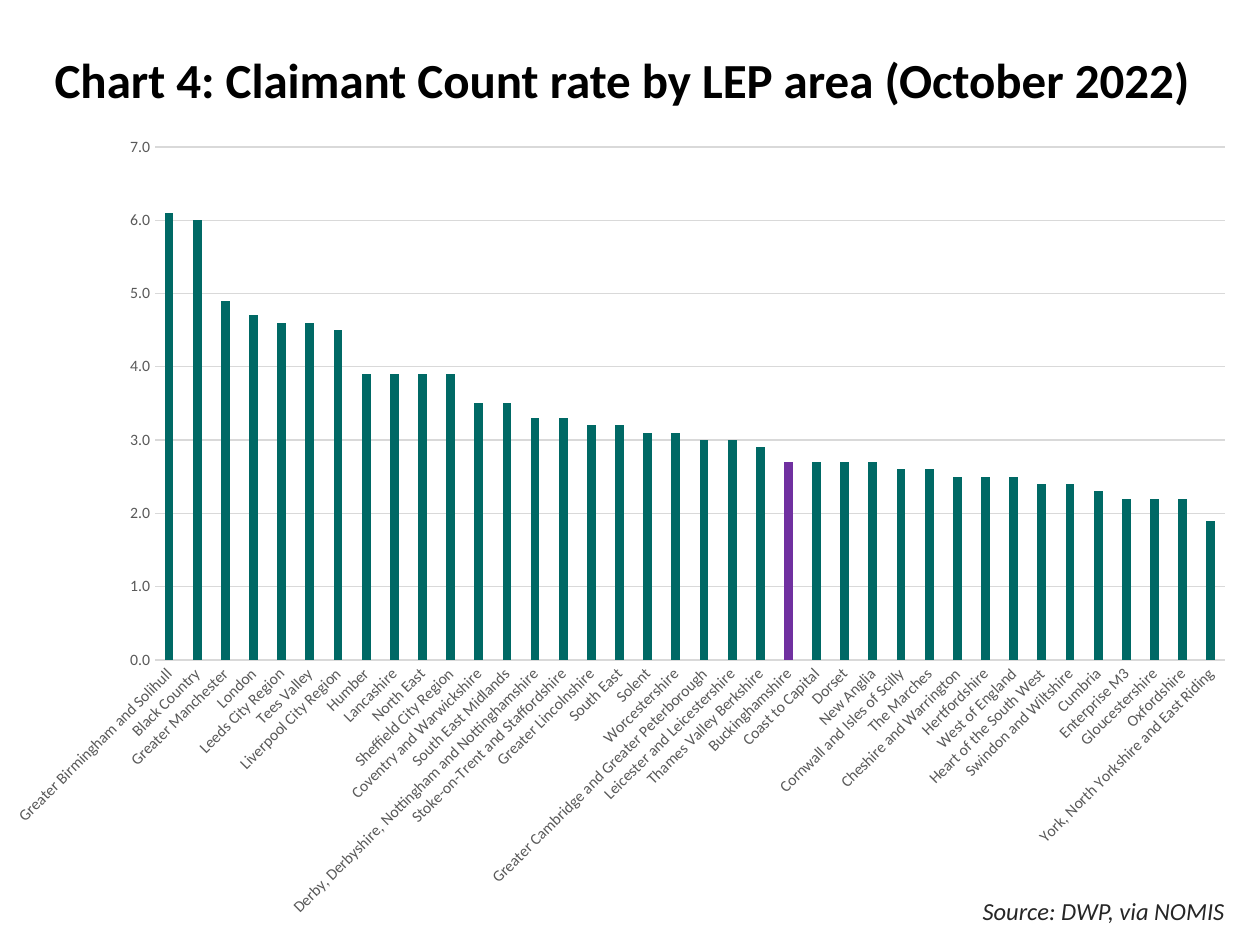
import lxml.etree
import pptx
import pptx.chart.data
import pptx.dml.color
import pptx.enum.chart
import pptx.enum.text
import pptx.oxml
import pptx.util
from dataclasses import dataclass


@dataclass(frozen=True)
class Theme:
    font: str = "Calibri"
    background: str = "FFFFFF"
    title: str = "000000"
    source: str = "262626"
    axis_text: str = "595959"
    grid: str = "D9D9D9"
    bar: str = "006965"
    highlight: str = "7030A0"
    title_size: int = 28
    source_size: int = 14
    chart_size: int = 10
    axis_size: int = 9


THEME = Theme()
EMU_PER_PX = 914400 / 126
HIGHLIGHTED_AREA = "Buckinghamshire"
CLAIMANT_RATES = {
    "Greater Birmingham and Solihull": 6.1,
    "Black Country": 6.0,
    "Greater Manchester": 4.9,
    "London": 4.7,
    "Leeds City Region": 4.6,
    "Tees Valley": 4.6,
    "Liverpool City Region": 4.5,
    "Humber": 3.9,
    "Lancashire": 3.9,
    "North East": 3.9,
    "Sheffield City Region": 3.9,
    "Coventry and Warwickshire": 3.5,
    "South East Midlands": 3.5,
    "Derby, Derbyshire, Nottingham and Nottinghamshire": 3.3,
    "Stoke-on-Trent and Staffordshire": 3.3,
    "Greater Lincolnshire": 3.2,
    "South East": 3.2,
    "Solent": 3.1,
    "Worcestershire": 3.1,
    "Greater Cambridge and Greater Peterborough": 3.0,
    "Leicester and Leicestershire": 3.0,
    "Thames Valley Berkshire": 2.9,
    "Buckinghamshire": 2.7,
    "Coast to Capital": 2.7,
    "Dorset": 2.7,
    "New Anglia": 2.7,
    "Cornwall and Isles of Scilly": 2.6,
    "The Marches": 2.6,
    "Cheshire and Warrington": 2.5,
    "Hertfordshire": 2.5,
    "West of England": 2.5,
    "Heart of the South West": 2.4,
    "Swindon and Wiltshire": 2.4,
    "Cumbria": 2.3,
    "Enterprise M3": 2.2,
    "Gloucestershire": 2.2,
    "Oxfordshire": 2.2,
    "York, North Yorkshire and East Riding": 1.9,
}


def px(*lengths):
    return [pptx.util.Emu(round(length * EMU_PER_PX)) for length in lengths]


def format_font(font, size, color):
    font.name = THEME.font
    font.size = pptx.util.Pt(size)
    font.color.rgb = pptx.dml.color.RGBColor.from_string(color)


presentation = pptx.Presentation()
presentation.slide_width, presentation.slide_height = px(1260, 945)
slide = presentation.slides.add_slide(presentation.slide_layouts.get_by_name("Title Only"))

# Title
title = slide.shapes.title
title.left, title.top, title.width, title.height = px(42, 34, 1179, 97)
title.fill.solid()
title.fill.fore_color.rgb = pptx.dml.color.RGBColor.from_string(THEME.background)
title.text_frame.text = "Chart 4: Claimant Count rate by LEP area (October 2022)"
title.text_frame.auto_size = pptx.enum.text.MSO_AUTO_SIZE.NONE
title.text_frame.vertical_anchor = pptx.enum.text.MSO_ANCHOR.MIDDLE
paragraph = title.text_frame.paragraphs[0]
paragraph.alignment = pptx.enum.text.PP_ALIGN.LEFT
paragraph.line_spacing = 0.9
format_font(paragraph.runs[0].font, THEME.title_size, THEME.title)
paragraph.runs[0].font.bold = True

# Source line
source = slide.shapes.add_textbox(*px(937, 890, 300, 43))
source.text_frame.word_wrap = True
source.text_frame.text = "Source: DWP, via NOMIS"
paragraph = source.text_frame.paragraphs[0]
paragraph.alignment = pptx.enum.text.PP_ALIGN.RIGHT
format_font(paragraph.runs[0].font, THEME.source_size, THEME.source)
paragraph.runs[0].font.italic = True

# Column chart
chart_data = pptx.chart.data.CategoryChartData(number_format="#,##0.0")
chart_data.categories = list(CLAIMANT_RATES)
chart_data.add_series("Series 1", list(CLAIMANT_RATES.values()))
chart = slide.shapes.add_chart(
    pptx.enum.chart.XL_CHART_TYPE.COLUMN_CLUSTERED, *px(-10, 122, 1260, 811), chart_data
).chart
chart.has_legend = False
chart.has_title = False
format_font(chart.font, THEME.chart_size, THEME.title)

plot = chart.plots[0]
plot.gap_width = 219
plot.overlap = -27
plot.vary_by_categories = False
series = plot.series[0]
highlighted_point = series.points[list(CLAIMANT_RATES).index(HIGHLIGHTED_AREA)]
for bar, color in ((series, THEME.bar), (highlighted_point, THEME.highlight)):
    bar.format.fill.solid()
    bar.format.fill.fore_color.rgb = pptx.dml.color.RGBColor.from_string(color)

# Axes
category_axis, value_axis = chart.category_axis, chart.value_axis
for axis in (category_axis, value_axis):
    axis.major_tick_mark = pptx.enum.chart.XL_TICK_MARK.NONE
    axis.minor_tick_mark = pptx.enum.chart.XL_TICK_MARK.NONE
    format_font(axis.tick_labels.font, THEME.axis_size, THEME.axis_text)
value_axis.minimum_scale = 0
value_axis.maximum_scale = 7
value_axis.major_unit = 1
value_axis.has_major_gridlines = True
value_axis.tick_labels.number_format = "#,##0.0"
value_axis.tick_labels.number_format_is_linked = False
value_axis.format.line.fill.background()
for line in (category_axis.format.line, value_axis.major_gridlines.format.line):
    line.color.rgb = pptx.dml.color.RGBColor.from_string(THEME.grid)
    line.width = pptx.util.Pt(0.75)

# Slanted area names and a fixed inner plot area
label_body = category_axis._element.find(".//" + pptx.oxml.ns.qn("a:bodyPr"))
label_body.set("rot", str(-45 * 60000))
label_body.set("vert", "horz")
plot_area = chart._chartSpace.chart.plotArea
for old_layout in plot_area.findall(pptx.oxml.ns.qn("c:layout")):
    plot_area.remove(old_layout)
layout = lxml.etree.Element(pptx.oxml.ns.qn("c:layout"))
manual_layout = lxml.etree.SubElement(layout, pptx.oxml.ns.qn("c:manualLayout"))
for name, value in (
    ("layoutTarget", "inner"), ("xMode", "edge"), ("yMode", "edge"),
    ("x", 165 / 1260), ("y", 25 / 811), ("w", 1070 / 1260), ("h", 513 / 811),
):
    lxml.etree.SubElement(manual_layout, pptx.oxml.ns.qn("c:" + name)).set("val", str(value))
plot_area.insert(0, layout)

presentation.save("out.pptx")
